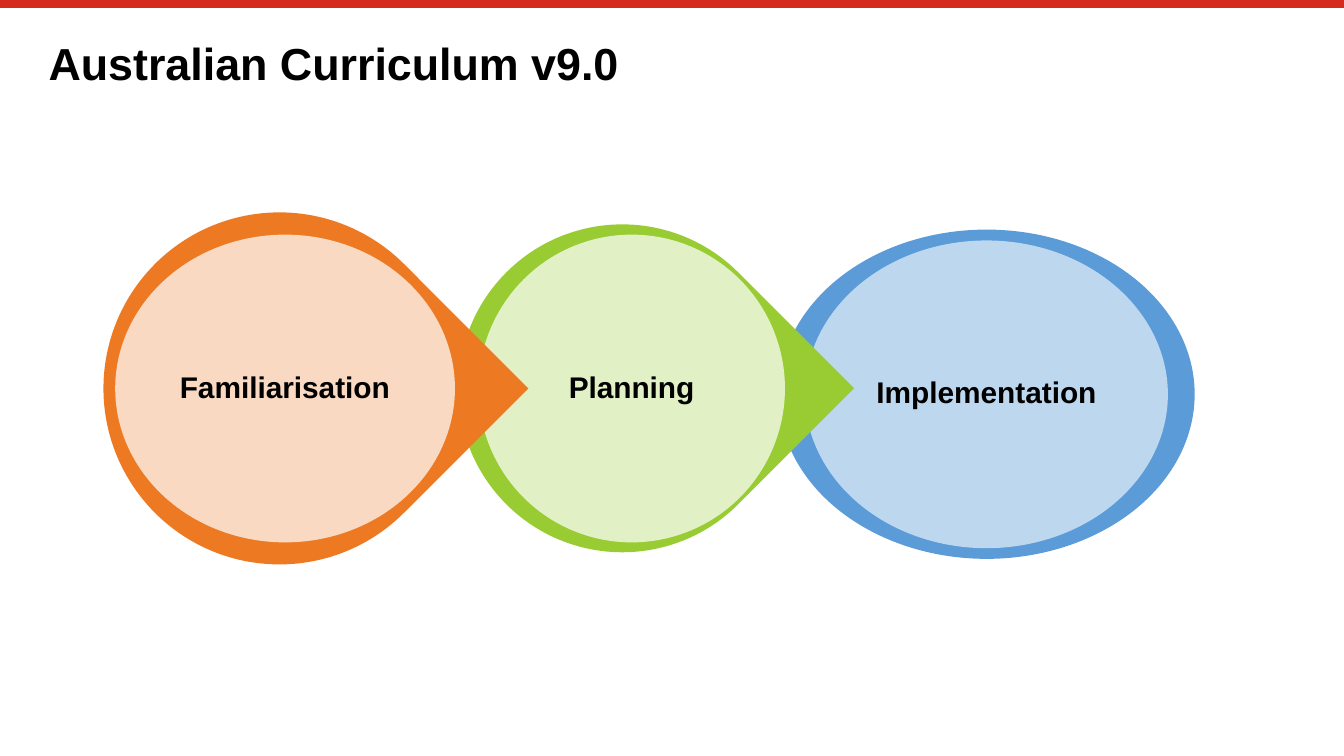
import pptx
import pptx.util
import pptx.dml.color
import pptx.enum.shapes
import pptx.enum.text
import pptx.oxml.ns
import lxml.etree

Pt = pptx.util.Pt
SHAPES = pptx.enum.shapes.MSO_SHAPE
ALIGN = pptx.enum.text.PP_ALIGN


def colour(value):
    return pptx.dml.color.RGBColor.from_string(value)


class SlideBuilder:
    font = "Arial"
    ink = "000000"
    line_spacing = 0.9

    def __init__(self, page):
        self.page = page

    def shape(self, kind, frame, fill, rotation=0, opacity=100):
        shape = self.page.shapes.add_shape(kind, *map(Pt, frame))
        shape.shadow.inherit = False
        shape.rotation = rotation
        shape.line.fill.background()
        shape.fill.solid()
        shape.fill.fore_color.rgb = colour(fill)
        if opacity < 100:
            tint = shape.fill._xPr.find(".//" + pptx.oxml.ns.qn("a:srgbClr"))
            alpha = lxml.etree.SubElement(tint, pptx.oxml.ns.qn("a:alpha"))
            alpha.set("val", str(opacity * 1000))
        return shape

    def text(self, words, frame, size, align=ALIGN.LEFT, inset=0):
        box = self.page.shapes.add_textbox(*map(Pt, frame))
        body = box.text_frame
        body.word_wrap = True
        body.vertical_anchor = pptx.enum.text.MSO_ANCHOR.MIDDLE
        body.margin_left = body.margin_right = Pt(inset)
        body.margin_top = body.margin_bottom = Pt(inset)
        para = body.paragraphs[0]
        para.alignment = align
        para.line_spacing = self.line_spacing
        span = para.add_run()
        span.text = words
        span.font.name = self.font
        span.font.size = Pt(size)
        span.font.bold = True
        span.font.color.rgb = colour(self.ink)

    def line(self, start, end, ink, width):
        line = self.page.shapes.add_connector(
            pptx.enum.shapes.MSO_CONNECTOR.STRAIGHT, *map(Pt, start + end))
        line.line.color.rgb = colour(ink)
        line.line.width = Pt(width)
        lxml.etree.SubElement(line._element.spPr, pptx.oxml.ns.qn("a:effectLst"))

    def stage(self, name, kind, rotation, outer, disc, rim, tint, label_width):
        """Coloured rim, pale disc and a label centred on the disc."""
        self.shape(kind, outer, rim, rotation)
        self.shape(SHAPES.OVAL, disc, tint, opacity=90)
        left, top, width, height = disc
        label_height = 117.4
        label = (left + (width - label_width) / 2,
                 top + (height - label_height) / 2, label_width, label_height)
        self.text(name, label, 16, ALIGN.CENTER, inset=1.4)


def main():
    deck = pptx.Presentation()
    deck.slide_width, deck.slide_height = Pt(720), Pt(405)
    builder = SlideBuilder(deck.slides.add_slide(deck.slide_layouts[6]))

    # Top rule and title
    builder.line((0, 2.1), (720, 2.1), "D52B1E", 4.2)
    builder.text("Australian Curriculum v9.0", (26, 21.6, 669, 28), 24)

    # Stages, last one first so that each drop points over the next
    stages = [
        ("Implementation", SHAPES.OVAL, 0, (417, 123, 223, 176.4),
         (431.3, 128.8, 194.4, 164.9), "5B9BD8", "C8DEF2", 139),
        ("Planning", SHAPES.TEAR, 45, (245.5, 120.2, 175.7, 175.7),
         (256.3, 125.7, 164.2, 164.9), "99CC33", "EBF5D6", 117.4),
        ("Familiarisation", SHAPES.TEAR, 45, (55.4, 113.8, 188.6, 188.6),
         (61.7, 125.7, 182, 164.9), "ED7A23", "FBE4D3", 129.6),
    ]
    for stage in stages:
        builder.stage(*stage)

    deck.save("out.pptx")


if __name__ == "__main__":
    main()
